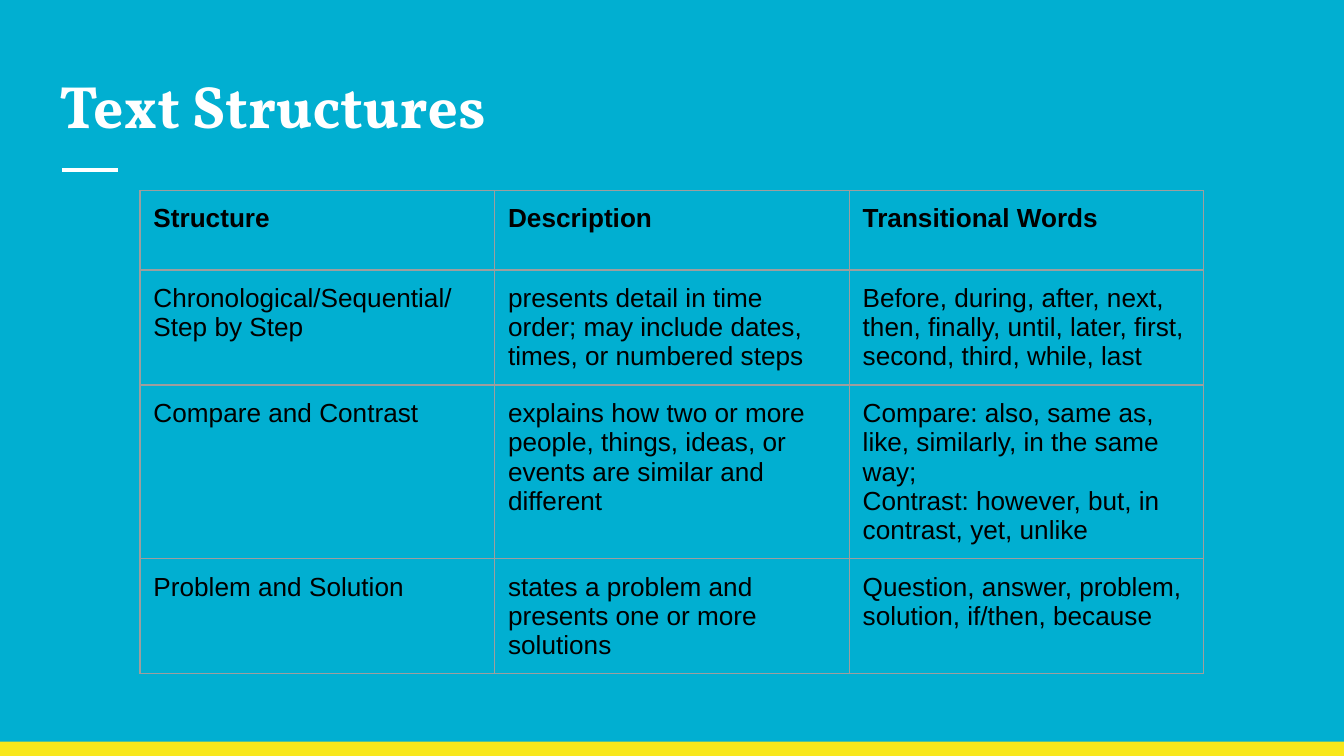
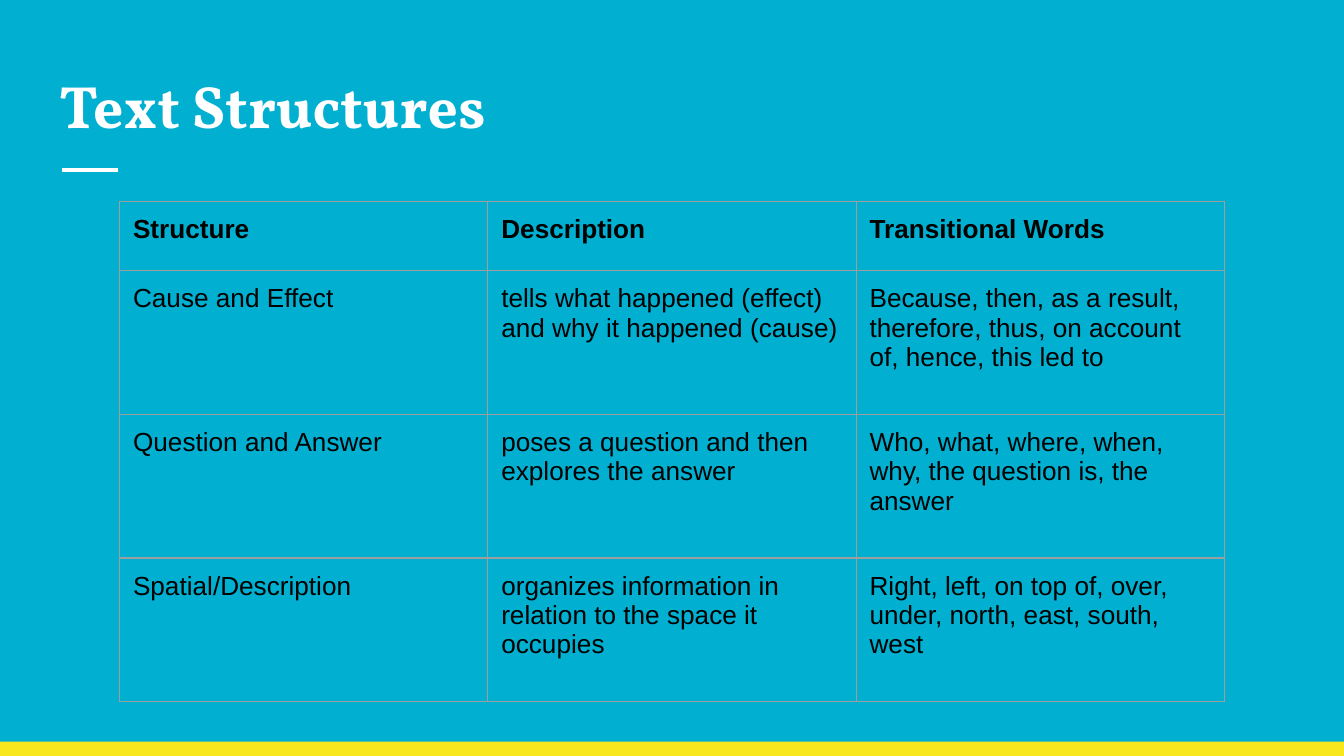
from lxml import etree
from pptx import Presentation
from pptx.dml.color import RGBColor
from pptx.enum import shapes, text
from pptx.oxml import ns
from pptx.util import Pt

BLUE = RGBColor(0x01, 0xAF, 0xD1)
YELLOW = RGBColor(0xF8, 0xE7, 0x1C)
WHITE = RGBColor(0xFF, 0xFF, 0xFF)
BLACK = RGBColor(0x00, 0x00, 0x00)
GREY = RGBColor(0x9E, 0x9E, 0x9E)
TITLE_FONT, BODY_FONT = "Vollkorn", "Arial"
WIDTH, HEIGHT, BAND = 720, 405, 7.6
INSET = 7.2

HEADER = ("Structure", "Description", "Transitional Words")
NARRATIVE_ROWS = [
    ("Chronological/Sequential/\nStep by Step",
     "presents detail in time order; may include dates, times, or numbered steps",
     "Before, during, after, next, then, finally, until, later, first, second, "
     "third, while, last"),
    ("Compare and Contrast",
     "explains how two or more people, things, ideas, or events are similar and different",
     "Compare: also, same as, like, similarly, in the same way;\n"
     "Contrast: however, but, in contrast, yet, unlike"),
    ("Problem and Solution",
     "states a problem and presents one or more solutions",
     "Question, answer, problem, solution, if/then, because"),
]
REASONING_ROWS = [
    ("Cause and Effect",
     "tells what happened (effect) and why it happened (cause)",
     "Because, then, as a result, therefore, thus, on account of, hence, this led to"),
    ("Question and Answer",
     "poses a question and then explores the answer",
     "Who, what, where, when, why, the question is, the answer"),
    ("Spatial/Description",
     "organizes information in relation to the space it occupies",
     "Right, left, on top of, over, under, north, east, south, west"),
]


class Deck:
    def __init__(self):
        self.prs = Presentation()
        self.prs.slide_width, self.prs.slide_height = Pt(WIDTH), Pt(HEIGHT)
        fill = self.prs.slide_master.background.fill
        fill.solid()
        fill.fore_color.rgb = BLUE

    def slide(self, title):
        self.s = self.prs.slides.add_slide(self.prs.slide_layouts[5])
        self.band()
        self.rule()
        self.title(title)

    def band(self):
        sp = self.s.shapes.add_shape(shapes.MSO_SHAPE.RECTANGLE, 0,
                                     Pt(HEIGHT - BAND), Pt(WIDTH), Pt(BAND))
        sp.shadow.inherit = False
        sp.fill.solid()
        sp.fill.fore_color.rgb = YELLOW
        sp.line.fill.background()

    def rule(self):
        ln = self.s.shapes.add_connector(shapes.MSO_CONNECTOR.STRAIGHT,
                                         Pt(33.2), Pt(91), Pt(63.2), Pt(91))
        ln.line.color.rgb = WHITE
        ln.line.width = Pt(2.25)
        etree.SubElement(ln._element.spPr, ns.qn("a:effectLst"))

    def title(self, words):
        sp = self.s.shapes.title
        sp.left, sp.top, sp.width, sp.height = Pt(24.5), Pt(29.5), Pt(671), Pt(51)
        tf = sp.text_frame
        tf.text = words
        tf.word_wrap = True
        tf.auto_size = text.MSO_AUTO_SIZE.NONE
        tf.vertical_anchor = text.MSO_ANCHOR.TOP
        tf.margin_left = tf.margin_right = tf.margin_top = tf.margin_bottom = Pt(INSET)
        p = tf.paragraphs[0]
        p.alignment = text.PP_ALIGN.LEFT
        self.font(p, TITLE_FONT, 32, WHITE, True)

    def font(self, p, name, size, color, bold):
        f = p.font
        f.name, f.size, f.bold = name, Pt(size), bold
        f.color.rgb = color

    def table(self, top, col_width, heights, frame_height, body):
        rows = [HEADER] + body
        width = col_width * len(HEADER)
        frame = self.s.shapes.add_table(len(rows), len(HEADER), Pt((WIDTH - width) / 2),
                                        Pt(top), Pt(width), Pt(sum(heights)))
        tbl = frame.table
        tbl.first_row = tbl.horz_banding = False
        for i, (words, height) in enumerate(zip(rows, heights)):
            tbl.rows[i].height = Pt(height)
            for j, word in enumerate(words):
                self.cell(tbl.cell(i, j), word, i == 0)
        frame.height = Pt(frame_height)

    def cell(self, c, words, bold):
        c.text = words
        c.margin_left = c.margin_right = c.margin_top = c.margin_bottom = Pt(INSET)
        tcPr = c._tc.get_or_add_tcPr()
        for side in "LRTB":
            ln = etree.SubElement(tcPr, ns.qn("a:ln" + side), w=str(Pt(0.75)))
            fill = etree.SubElement(ln, ns.qn("a:solidFill"))
            etree.SubElement(fill, ns.qn("a:srgbClr"), val=str(GREY))
        c.fill.background()
        for p in c.text_frame.paragraphs:
            self.font(p, BODY_FONT, 14, BLACK, bold)


def main():
    deck = Deck()
    deck.slide("Text Structures")
    deck.table(102.2, 190, [42.5, 30, 30, 30], 270.5, NARRATIVE_ROWS)
    deck.slide("Text Structures")
    deck.table(108, 197.3, [37, 77, 77, 77], 268, REASONING_ROWS)
    deck.prs.save("out.pptx")


if __name__ == "__main__":
    main()
